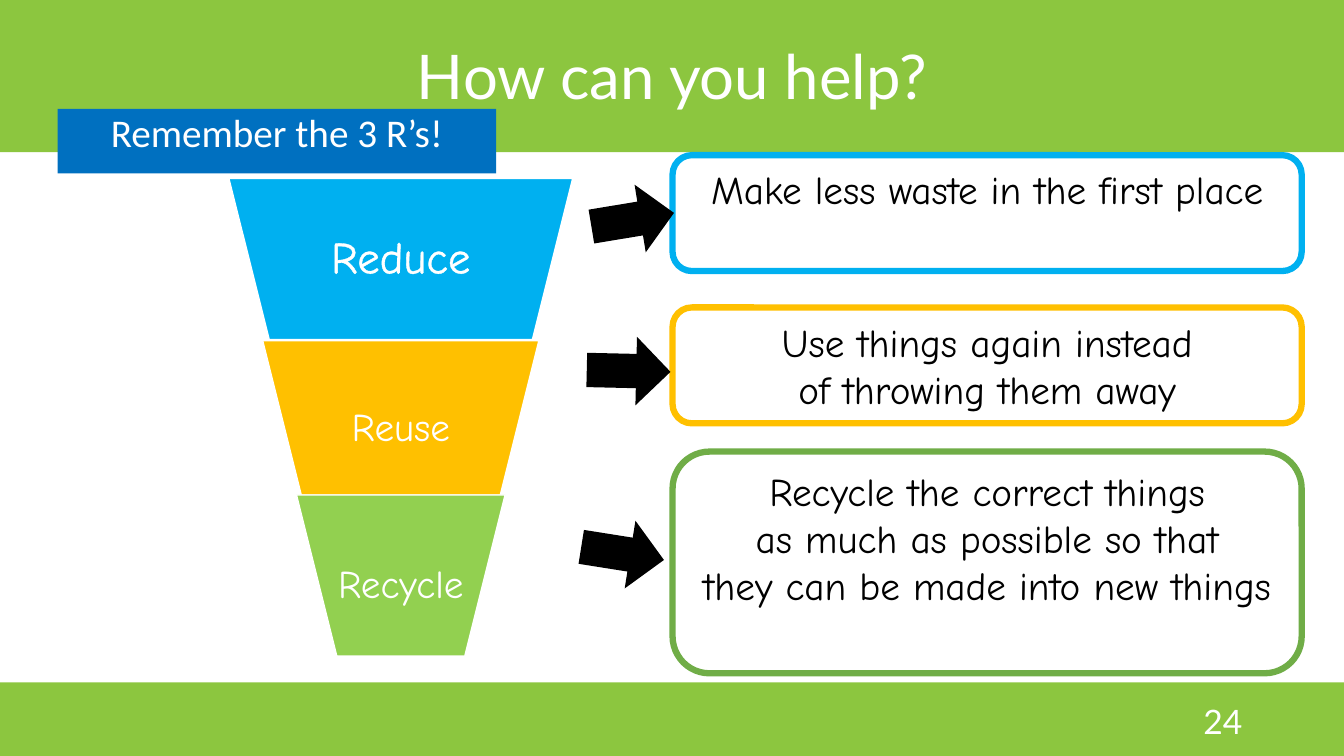
from dataclasses import dataclass

from lxml.etree import SubElement
from pptx import Presentation
from pptx.dml.color import RGBColor
from pptx.enum.shapes import MSO_SHAPE
from pptx.enum.text import MSO_ANCHOR, MSO_AUTO_SIZE, PP_ALIGN
from pptx.oxml.ns import qn
from pptx.shapes.autoshape import Shape
from pptx.slide import Slide
from pptx.text.text import TextFrame
from pptx.util import Emu, Inches, Pt

COLOURS = {
    "band": "8CC63F", "white": "FFFFFF", "black": "000000", "banner": "0070C0",
    "blue": "00B0F0", "amber": "FFC000", "lime": "92D050", "green": "70AD47",
}
SLIDE_WIDTH, SLIDE_HEIGHT = Inches(13.33), Inches(7.5)
FUNNEL_CENTRE, FUNNEL_WIDTH, FUNNEL_STEP = 29.82, 25.58, 5.03
NOTE_LEFT, NOTE_WIDTH = 50.04, 46.81
ARROW_WIDTH, ARROW_HEIGHT = 6.23, 9.07


@dataclass(frozen=True)
class Area:
    """Percentages of the slide's width (left, width) and height (top, height)."""
    left: float
    top: float
    width: float
    height: float

    def lengths(self) -> tuple[Emu, Emu, Emu, Emu]:
        return (
            Emu(round(SLIDE_WIDTH * self.left / 100)),
            Emu(round(SLIDE_HEIGHT * self.top / 100)),
            Emu(round(SLIDE_WIDTH * self.width / 100)),
            Emu(round(SLIDE_HEIGHT * self.height / 100)),
        )


@dataclass(frozen=True)
class Stage:
    label: str
    fill: str
    top: float
    height: float
    label_top: float
    label_width: float
    size: int
    outlined: bool = False


@dataclass(frozen=True)
class Note:
    lines: tuple[str, ...]
    border: str
    top: float
    height: float
    arrow_left: float
    arrow_top: float
    arrow_angle: float


STAGES = (
    Stage("Reduce", "blue", 23.6, 21.33, 23.6, 16.65, 32, outlined=True),
    Stage("Reuse", "amber", 45.07, 20.4, 48, 9.53, 28),
    Stage("Recycle", "lime", 65.47, 21.33, 68.27, 11.55, 28),
)
NOTES = (
    Note(("Make less waste in the first place",),
         "blue", 20.53, 15.33, 43.96, 24.53, -9.4),
    Note(("Use things again instead", "of throwing them away"),
         "amber", 40.67, 15.33, 43.66, 44.53, 1.3),
    Note(("Recycle the correct things", "as much as possible so that",
          "they can be made into new things"),
         "green", 59.73, 29.33, 43.21, 68.67, 9),
)


def colour(name: str) -> RGBColor:
    return RGBColor.from_string(COLOURS[name])


def place(box: Shape, area: Area) -> None:
    box.left, box.top, box.width, box.height = area.lengths()


def write(frame: TextFrame, lines: tuple[str, ...], font: str, size: int,
          ink: str = "white", align: PP_ALIGN = PP_ALIGN.CENTER,
          anchor: MSO_ANCHOR = MSO_ANCHOR.MIDDLE, spacing: float = 0.9) -> None:
    frame.word_wrap = True
    frame.auto_size = MSO_AUTO_SIZE.NONE
    frame.vertical_anchor = anchor
    para = frame.paragraphs[0]
    para.alignment = align
    para.line_spacing = spacing
    para.space_before = Pt(0)
    for index, line in enumerate(lines):
        if index:
            para.add_line_break()
        span = para.add_run()
        span.text = line
        span.font.name = font
        span.font.size = Pt(size)
        span.font.color.rgb = colour(ink)


def outline_text(frame: TextFrame) -> None:
    for span in frame.paragraphs[0].runs:
        properties = span.font._element if hasattr(span.font, "_element") else span._r.get_or_add_rPr()
        line = SubElement(properties, qn("a:ln"), w=str(Pt(0.75)))
        fill = SubElement(line, qn("a:solidFill"))
        SubElement(fill, qn("a:srgbClr"), val=COLOURS["white"])
        properties.insert(0, line)


def add_figure(page: Slide, kind: MSO_SHAPE, area: Area, fill: str = "",
               border: str = "", weight: float = 1) -> Shape:
    box = page.shapes.add_shape(kind, *area.lengths())
    box.shadow.inherit = False
    if fill:
        box.fill.solid()
        box.fill.fore_color.rgb = colour(fill)
    else:
        box.fill.background()
    if border:
        box.line.color.rgb = colour(border)
        box.line.width = Pt(weight)
    else:
        box.line.fill.background()
    return box


def add_bands(page: Slide) -> None:
    """Put the green bands on the layout, behind everything on the slide."""
    for area in (Area(0, 90.27, 100, 9.73), Area(0, 0, 100, 20.13)):
        band = add_figure(page, MSO_SHAPE.RECTANGLE, area, "band")
        page.slide_layout.shapes.element.insert(2, band.element)


def add_headings(page: Slide) -> None:
    title = page.shapes.title
    place(title, Area(0, 0.8, 100, 19.33))
    write(title.text_frame, ("How can you help?",), "Lato", 44)

    banner = page.placeholders[1]
    place(banner, Area(4.28, 14.4, 32.63, 8.53))
    banner.fill.solid()
    banner.fill.fore_color.rgb = colour("banner")
    properties = banner.text_frame.paragraphs[0]._p.get_or_add_pPr()
    properties.set("marL", "0")
    properties.set("indent", "0")
    SubElement(properties, qn("a:buNone"))
    write(banner.text_frame, ("Remember the 3 R’s!",), "Calibri", 28,
          anchor=MSO_ANCHOR.TOP)


def add_page_number(page: Slide) -> None:
    box = page.shapes.add_textbox(*Area(70.67, 92.67, 22.5, 5.33).lengths())
    write(box.text_frame, ("24",), "Lato", 24, align=PP_ALIGN.RIGHT, spacing=1)


def add_stage(page: Slide, stage: Stage, width: float) -> None:
    area = Area(FUNNEL_CENTRE - width / 2, stage.top, width, stage.height)
    add_figure(page, MSO_SHAPE.TRAPEZOID, area, stage.fill, "white").rotation = 180

    label_area = Area(FUNNEL_CENTRE - stage.label_width / 2, stage.label_top,
                      stage.label_width, stage.top + stage.height - stage.label_top)
    frame = page.shapes.add_textbox(*label_area.lengths()).text_frame
    frame.margin_left = frame.margin_right = Inches(0.04)
    frame.margin_top = frame.margin_bottom = Inches(0.04)
    write(frame, (stage.label,), "Comic Neue", stage.size)
    if stage.outlined:
        outline_text(frame)


def add_note(page: Slide, note: Note) -> None:
    area = Area(NOTE_LEFT, note.top, NOTE_WIDTH, note.height)
    box = add_figure(page, MSO_SHAPE.ROUNDED_RECTANGLE, area, border=note.border, weight=4.5)
    write(box.text_frame, note.lines, "Comic Neue", 28, "black",
          anchor=MSO_ANCHOR.TOP, spacing=1)
    arrow_area = Area(note.arrow_left, note.arrow_top, ARROW_WIDTH, ARROW_HEIGHT)
    arrow = add_figure(page, MSO_SHAPE.RIGHT_ARROW, arrow_area, "black")
    arrow.rotation = note.arrow_angle


def main() -> None:
    deck = Presentation()
    deck.slide_width, deck.slide_height = SLIDE_WIDTH, SLIDE_HEIGHT
    page = deck.slides.add_slide(deck.slide_layouts[1])
    add_bands(page)
    add_headings(page)
    add_page_number(page)
    for index, stage in enumerate(STAGES):
        add_stage(page, stage, FUNNEL_WIDTH - index * FUNNEL_STEP)
    for note in NOTES:
        add_note(page, note)
    deck.save("out.pptx")


if __name__ == "__main__":
    main()
